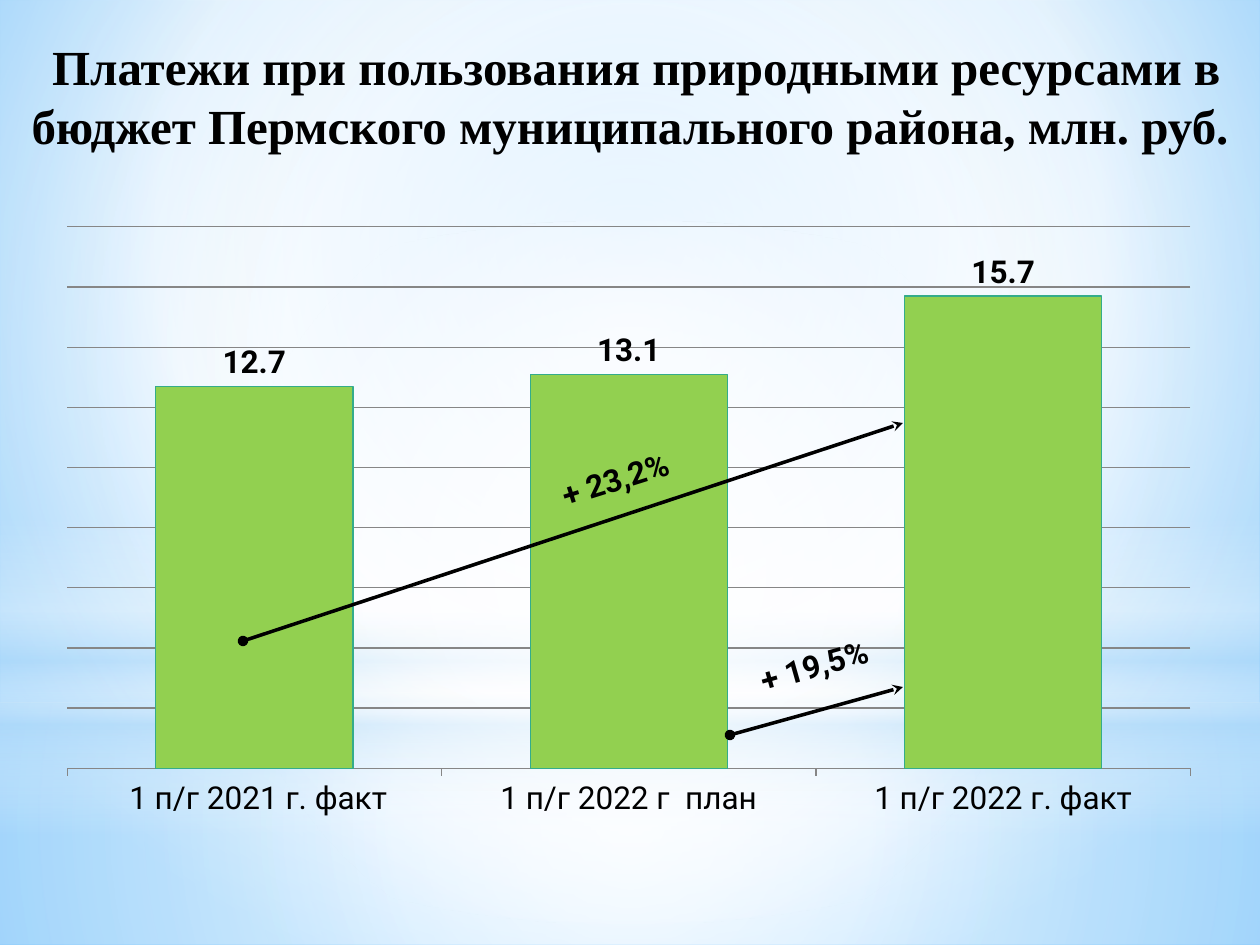
from lxml import etree
from pptx import Presentation
from pptx.chart.data import CategoryChartData
from pptx.dml.color import RGBColor
from pptx.enum.chart import XL_CHART_TYPE, XL_LABEL_POSITION, XL_TICK_LABEL_POSITION, XL_TICK_MARK
from pptx.enum.shapes import MSO_CONNECTOR, MSO_SHAPE
from pptx.enum.text import MSO_ANCHOR, MSO_AUTO_SIZE, PP_ALIGN
from pptx.oxml.ns import qn
from pptx.util import Pt

COLUMNS = XL_CHART_TYPE.COLUMN_CLUSTERED
LABELS_ABOVE = XL_LABEL_POSITION.OUTSIDE_END
NO_TICK_LABELS = XL_TICK_LABEL_POSITION.NONE
TICK_NONE, TICK_OUT = XL_TICK_MARK.NONE, XL_TICK_MARK.OUTSIDE
STRAIGHT = MSO_CONNECTOR.STRAIGHT
RECTANGLE, OVAL = MSO_SHAPE.RECTANGLE, MSO_SHAPE.OVAL
MIDDLE = MSO_ANCHOR.MIDDLE
FIT_SHAPE, NO_FIT = MSO_AUTO_SIZE.SHAPE_TO_FIT_TEXT, MSO_AUTO_SIZE.NONE
LEFT, CENTER = PP_ALIGN.LEFT, PP_ALIGN.CENTER

THEME = {
    "ink": RGBColor(0x00, 0x00, 0x00),
    "bar": RGBColor(0x92, 0xD0, 0x50),
    "bar_line": RGBColor(0x34, 0xAC, 0x8B),
    "grid": RGBColor(0x86, 0x86, 0x86),
    "sky": "9ED5FF",
    "deep_sky": "5BB9FF",
    "white": "FFFFFF",
    "haze": "B4DCFA",
    "title_font": "Times New Roman",
    "body_font": "Roboto",
    "title_size": Pt(28),
    "body_size": Pt(18),
}
WHITE, HAZE = THEME["white"], THEME["haze"]


def px(length):
    return round(length * 914400 / 126)


def paint_gradient(properties, stops, focus):
    gradient = etree.Element(qn("a:gradFill"), rotWithShape="1")
    stop_list = etree.SubElement(gradient, qn("a:gsLst"))
    for position, color, opacity in stops:
        stop = etree.SubElement(stop_list, qn("a:gs"), pos=str(position * 1000))
        shade = etree.SubElement(stop, qn("a:srgbClr"), val=color)
        etree.SubElement(shade, qn("a:alpha"), val=str(opacity * 1000))
    if focus:
        circle = etree.SubElement(gradient, qn("a:path"), path="circle")
        sides = {side: str(share * 1000) for side, share in zip("ltrb", focus)}
        etree.SubElement(circle, qn("a:fillToRect"), sides)
    else:
        etree.SubElement(gradient, qn("a:lin"), ang="5400000", scaled="0")
    solid = properties.find(qn("a:solidFill"))
    properties.replace(solid, gradient)


deck = Presentation()
deck.slide_width, deck.slide_height = px(1260), px(945)
page = deck.slides.add_slide(deck.slide_layouts[5])

page.background.fill.solid()
paint_gradient(
    page.element.find(".//" + qn("p:bgPr")),
    [(0, THEME["sky"], 100), (60, WHITE, 100), (100, THEME["deep_sky"], 100)],
    (20, 10, 20, 60),
)

center_focus = (50, 50, 50, 50)
glow_panels = [
    (RECTANGLE, 703, 242, [(0, WHITE, 91), (37, WHITE, 76), (100, HAZE, 79)], center_focus),
    (RECTANGLE, 0, 703, [(0, WHITE, 89), (48, WHITE, 62), (100, HAZE, 79)], center_focus),
    (RECTANGLE, 519, 315, [(0, WHITE, 0), (29, WHITE, 30), (45, HAZE, 40),
                           (55, WHITE, 26), (65, HAZE, 60), (100, WHITE, 0)], None),
    (OVAL, 221, 703, [(0, WHITE, 100), (56, WHITE, 0)], center_focus),
]
for outline, top, height, stops, focus in glow_panels:
    panel = page.shapes.add_shape(outline, 0, px(top), px(1260), px(height))
    panel.shadow.inherit = False
    panel.line.fill.background()
    panel.fill.solid()
    paint_gradient(panel.element.spPr, stops, focus)

title = page.shapes.title
title.left, title.top, title.width, title.height = 0, px(18), px(1260), px(155)
page.shapes.element.append(title.element)
title_frame = title.text_frame
title_frame.text = " Платежи при пользования природными ресурсами в бюджет Пермского муниципального района, млн. руб."
title_frame.auto_size = NO_FIT
title_frame.vertical_anchor = MIDDLE
title_para = title_frame.paragraphs[0]
title_para.alignment = CENTER
title_font = title_para.runs[0].font
title_font.name = THEME["title_font"]
title_font.size = THEME["title_size"]
title_font.bold = True
title_font.color.rgb = THEME["ink"]

payments = CategoryChartData(number_format="#,##0.0")
payments.categories = [" 1 п/г 2021 г. факт", "1 п/г 2022 г  план", "1 п/г 2022 г. факт"]
payments.add_series("Series 1", (12.7, 13.1, 15.7))
chart = page.shapes.add_chart(COLUMNS, px(44), px(193), px(1158), px(677), payments).chart
chart.has_legend = False
chart.has_title = False
chart.font.name = THEME["body_font"]
chart.font.size = THEME["body_size"]
chart.font.color.rgb = THEME["ink"]

category_axis = chart.category_axis
category_axis.major_tick_mark = TICK_OUT
category_axis.format.line.color.rgb = THEME["grid"]
value_axis = chart.value_axis
value_axis.minimum_scale, value_axis.maximum_scale, value_axis.major_unit = 0, 18, 2
value_axis.major_tick_mark = TICK_NONE
value_axis.tick_label_position = NO_TICK_LABELS
value_axis.format.line.fill.background()
value_axis.major_gridlines.format.line.color.rgb = THEME["grid"]

plot = chart.plots[0]
plot.gap_width = 90
plot.vary_by_categories = False
bars = plot.series[0]
bars.format.fill.solid()
bars.format.fill.fore_color.rgb = THEME["bar"]
bars.format.line.color.rgb = THEME["bar_line"]
bars.format.line.width = Pt(0.75)
plot.has_data_labels = True
labels = plot.data_labels
labels.show_value = True
labels.position = LABELS_ABOVE
labels.number_format = "#,##0.0"
labels.number_format_is_linked = False
labels.font.name = THEME["body_font"]
labels.font.size = THEME["body_size"]
labels.font.bold = True
labels.font.color.rgb = THEME["ink"]

plot_area = chart.element.find(".//" + qn("c:plotArea"))
for old_layout in plot_area.findall(qn("c:layout")):
    plot_area.remove(old_layout)
layout = etree.Element(qn("c:layout"))
manual = etree.SubElement(layout, qn("c:manualLayout"))
plot_place = [("layoutTarget", "inner"), ("xMode", "edge"), ("yMode", "edge"),
              ("x", "0.02"), ("y", "0.05"), ("w", "0.97"), ("h", "0.8")]
for name, value in plot_place:
    etree.SubElement(manual, qn("c:" + name), val=value)
plot_area.insert(0, layout)

growth_notes = [
    ((243, 641, 903, 423), " + 23,2%", (539, 449, 183, 50), 342.6, LEFT),
    ((730, 735, 903, 687), "+ 19,5%", (741, 640, 146, 50), 344.2, CENTER),
]
for ends, wording, place, angle, alignment in growth_notes:
    arrow = page.shapes.add_connector(STRAIGHT, *map(px, ends))
    arrow.line.color.rgb = THEME["ink"]
    arrow.line.width = Pt(2)
    arrow_line = arrow.line._get_or_add_ln()
    etree.SubElement(arrow_line, qn("a:headEnd"), type="oval")
    etree.SubElement(arrow_line, qn("a:tailEnd"), type="stealth")
    etree.SubElement(arrow.element.spPr, qn("a:effectLst"))

    box = page.shapes.add_textbox(*map(px, place))
    box.rotation = angle
    box.text_frame.word_wrap = True
    box.text_frame.auto_size = FIT_SHAPE
    para = box.text_frame.paragraphs[0]
    para.text = wording
    para.alignment = alignment
    font = para.runs[0].font
    font.name = THEME["body_font"]
    font.size = THEME["body_size"]
    font.bold = True
    font.color.rgb = THEME["ink"]

deck.save("out.pptx")
